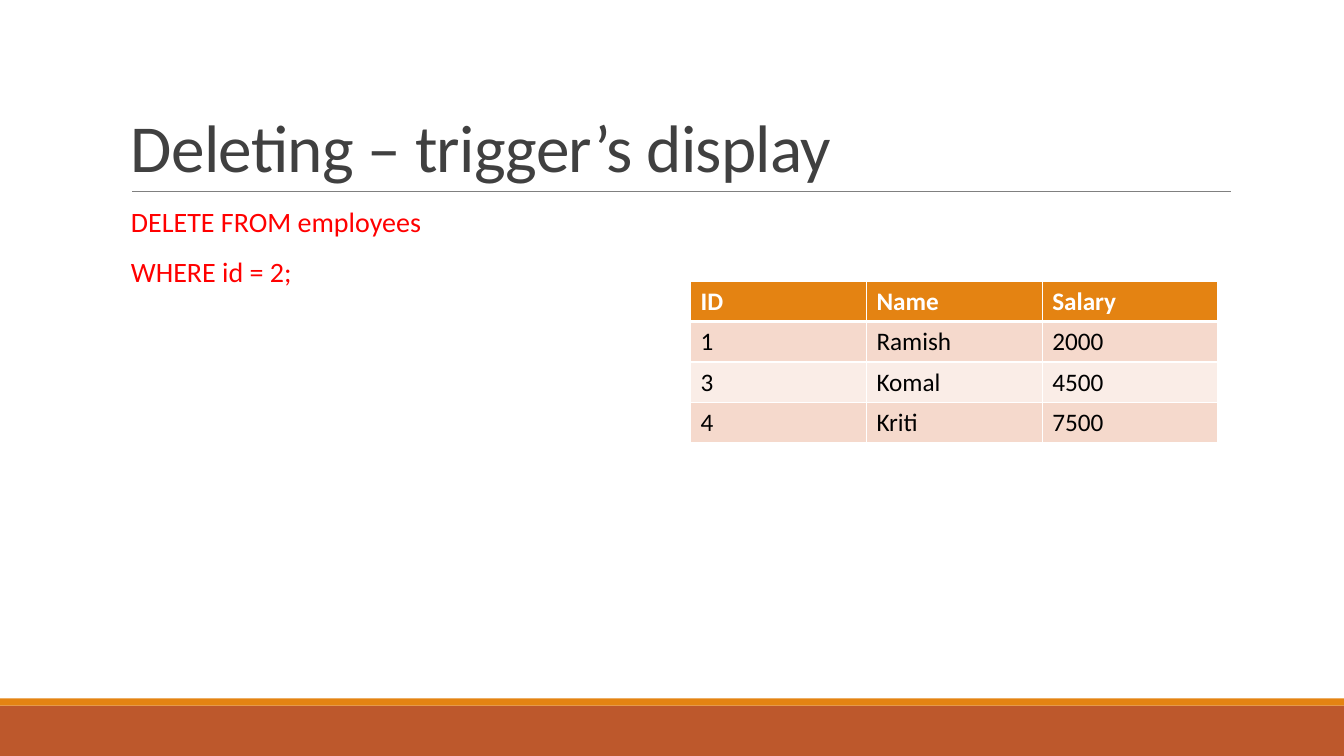
from lxml import etree
from pptx import Presentation, util as u
from pptx.dml.color import RGBColor
from pptx.enum import shapes, text
from pptx.oxml.ns import qn

Inches, Pt = u.Inches, u.Pt
FONT = "Calibri"
COLORS = {
    "footer": "BD582C", "accent": "E48312", "rule": "808080",
    "title": "404040", "code": "FF0000", "white": "FFFFFF",
    "black": "000000", "band_dark": "F5D9CC", "band_light": "FAEDE7",
}
EMPLOYEES = [
    ("ID", "Name", "Salary"),
    ("1", "Ramish", "2000"),
    ("3", "Komal", "4500"),
    ("4", "Kriti", "7500"),
]


def rgb(name):
    return RGBColor.from_string(COLORS[name])


def style_font(font, size, color, bold=False):
    font.name, font.size, font.bold = FONT, Pt(size), bold
    font.color.rgb = rgb(color)


def add_bar(slide, top, height, color):
    bar = slide.shapes.add_shape(
        shapes.MSO_SHAPE.RECTANGLE, 0, Inches(top), Inches(13.33), Inches(height))
    bar.shadow.inherit = False
    bar.fill.solid()
    bar.fill.fore_color.rgb = rgb(color)
    bar.line.fill.background()


def add_rule(slide, left, right, top):
    rule = slide.shapes.add_connector(
        shapes.MSO_CONNECTOR.STRAIGHT,
        Inches(left), Inches(top), Inches(right), Inches(top))
    rule.line.color.rgb = rgb("rule")
    rule.line.width = Pt(0.5)
    etree.SubElement(rule._element.spPr, qn("a:effectLst"))


def add_text(slide, top, height, lines, size, color, spacing, anchor):
    """Add a full-width text box and return its paragraphs."""
    box = slide.shapes.add_textbox(Inches(1.2), Inches(top), Inches(11), Inches(height))
    frame = box.text_frame
    frame.word_wrap = True
    frame.vertical_anchor = anchor
    frame.text = "\n".join(lines)
    for paragraph in frame.paragraphs:
        paragraph.line_spacing = spacing
        style_font(paragraph.font, size, color)
    return frame.paragraphs


def add_title(slide, title):
    paragraph, = add_text(slide, 0.31, 1.59, [title], 48, "title", 0.85,
                          text.MSO_ANCHOR.BOTTOM)
    paragraph.runs[0].font._element.set("spc", "-50")


def add_statement(slide, lines):
    for paragraph in add_text(slide, 2.02, 4.4, lines, 20, "code", 0.9,
                              text.MSO_ANCHOR.TOP):
        paragraph.space_before, paragraph.space_after = Pt(12), Pt(2)


def set_borders(cell, top, bottom):
    """Draw white cell borders; top and bottom are widths in points."""
    properties = cell._tc.get_or_add_tcPr()
    widths = {"lnL": 1, "lnR": 1, "lnT": top, "lnB": bottom}
    for position, (side, width) in enumerate(widths.items()):
        line = etree.Element(qn(f"a:{side}"), w=str(Pt(width)))
        fill = etree.SubElement(line, qn("a:solidFill"))
        etree.SubElement(fill, qn("a:srgbClr"), val=COLORS["white"])
        properties.insert(position, line)


def add_table(slide, rows):
    table = slide.shapes.add_table(
        len(rows), len(rows[0]), Inches(6.85), Inches(2.79),
        Inches(5.23), Inches(0.4 * len(rows))).table
    for row, values in enumerate(rows):
        header = row == 0
        band = "accent" if header else "band_dark" if row % 2 else "band_light"
        for column, value in enumerate(values):
            cell = table.cell(row, column)
            cell.text = value
            style_font(cell.text_frame.paragraphs[0].font, 18,
                       "white" if header else "black", header)
            cell.fill.solid()
            cell.fill.fore_color.rgb = rgb(band)
            set_borders(cell, top=3 if row == 1 else 1, bottom=3 if header else 1)


def main():
    presentation = Presentation()
    presentation.slide_width, presentation.slide_height = Inches(13.33), Inches(7.5)
    slide = presentation.slides.add_slide(presentation.slide_layouts[6])
    add_bar(slide, 7, 0.5, "footer")
    add_bar(slide, 6.93, 0.07, "accent")
    add_rule(slide, 1.31, 12.21, 1.9)
    add_title(slide, "Deleting – trigger’s display")
    add_statement(slide, ["DELETE FROM employees", "WHERE id = 2;"])
    add_table(slide, EMPLOYEES)
    presentation.save("out.pptx")


if __name__ == "__main__":
    main()
